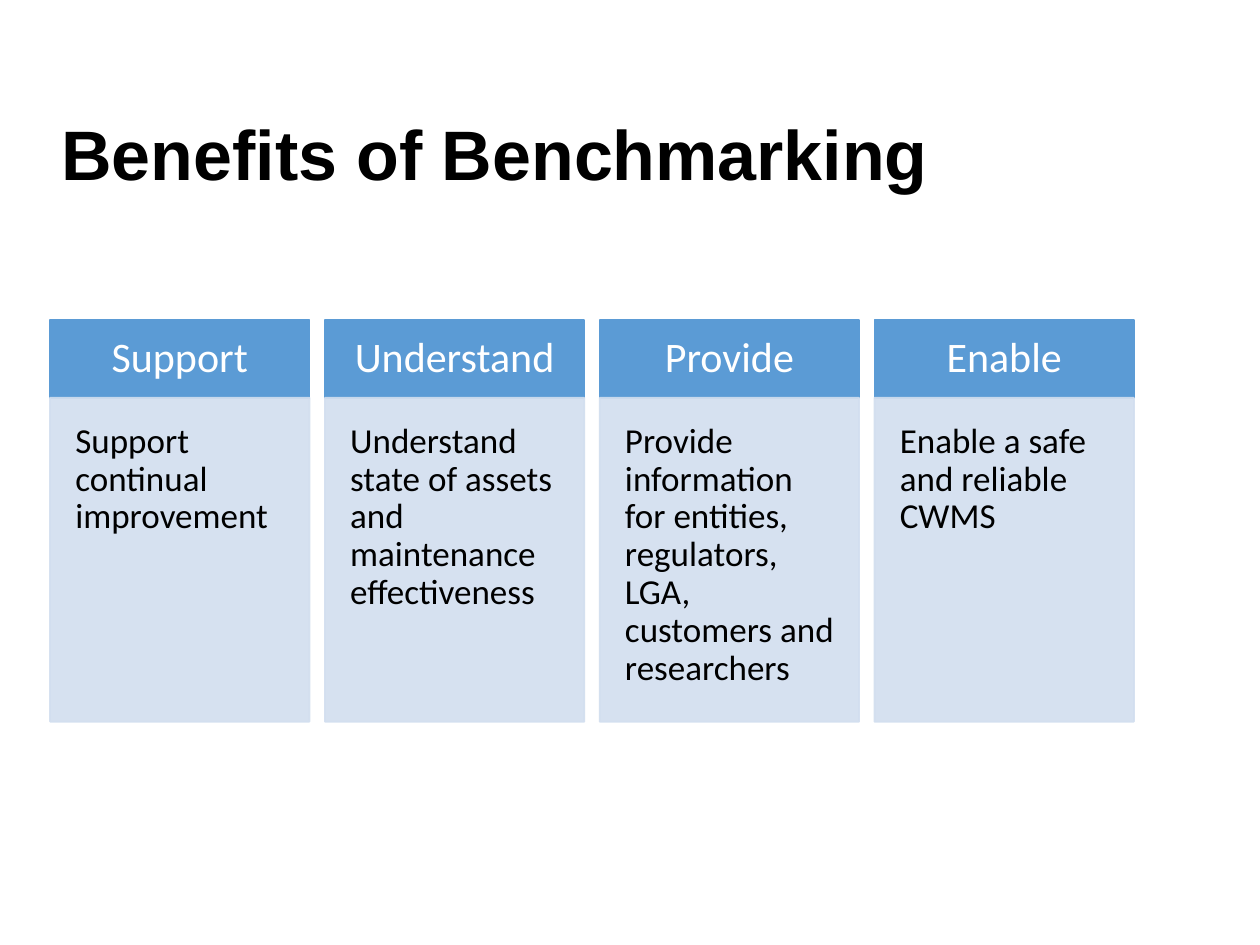
import lxml.etree
import pptx
import pptx.dml.color
import pptx.enum.shapes
import pptx.enum.text
import pptx.oxml.ns
import pptx.util

Cm = pptx.util.Cm
RGBColor = pptx.dml.color.RGBColor
Align = pptx.enum.text.PP_ALIGN
Anchor = pptx.enum.text.MSO_ANCHOR

BLUE = RGBColor(0x5B, 0x9B, 0xD5)
PALE_BLUE = RGBColor(0xD2, 0xDE, 0xEF)
BLACK = RGBColor(0, 0, 0)
WHITE = RGBColor(255, 255, 255)


def write_text(shape, text, size, color=BLACK, font="Calibri", bold=False,
               align=Align.LEFT, anchor=Anchor.TOP, inset=None):
    frame = shape.text_frame
    frame.word_wrap = True
    frame.vertical_anchor = anchor
    if inset is not None:
        frame.margin_left = frame.margin_right = inset
        frame.margin_top = frame.margin_bottom = inset
    paragraph = frame.paragraphs[0]
    paragraph.alignment = align
    paragraph.line_spacing = 0.9
    run = paragraph.add_run()
    run.text = text
    run.font.name = font
    run.font.size = pptx.util.Pt(size)
    run.font.bold = bold
    run.font.color.rgb = color


def add_box(slide, left, top, width, height, color, opacity=100):
    shape = slide.shapes.add_shape(
        pptx.enum.shapes.MSO_SHAPE.RECTANGLE, left, top, width, height)
    shape.shadow.inherit = False
    shape.fill.solid()
    shape.fill.fore_color.rgb = color
    shape.line.color.rgb = color
    shape.line.width = pptx.util.Pt(1)
    if opacity < 100:
        for element in shape.element.spPr.iter(pptx.oxml.ns.qn("a:srgbClr")):
            alpha = lxml.etree.SubElement(element, pptx.oxml.ns.qn("a:alpha"))
            alpha.set("val", str(opacity * 1000))
    return shape


presentation = pptx.Presentation()
presentation.slide_width = Cm(25.4)
presentation.slide_height = Cm(19.05)
slide = presentation.slides.add_slide(presentation.slide_layouts[6])

title = slide.shapes.add_textbox(Cm(0.99), Cm(1.35), Cm(21.89), Cm(3.68))
write_text(title, "Benefits of Benchmarking", 40, font="Arial", bold=True,
           anchor=Anchor.MIDDLE)

benefits = [
    ("Support", "Support continual improvement"),
    ("Understand", "Understand state of assets and maintenance effectiveness"),
    ("Provide", "Provide information for entities, regulators, LGA, "
                "customers and researchers"),
    ("Enable", "Enable a safe and reliable CWMS"),
]
column_width = Cm(5.23)
column_pitch = Cm(5.54)

for index, (heading, description) in enumerate(benefits):
    left = Cm(1.01) + index * column_pitch
    header = add_box(slide, left, Cm(6.45), column_width, Cm(1.57), BLUE)
    write_text(header, heading, 24, color=WHITE, align=Align.CENTER,
               anchor=Anchor.MIDDLE, inset=Cm(0.41))
    body = add_box(slide, left, Cm(8.02), column_width, Cm(6.53), PALE_BLUE,
                   opacity=90)
    write_text(body, description, 20, inset=Cm(0.51))

presentation.save("out.pptx")
